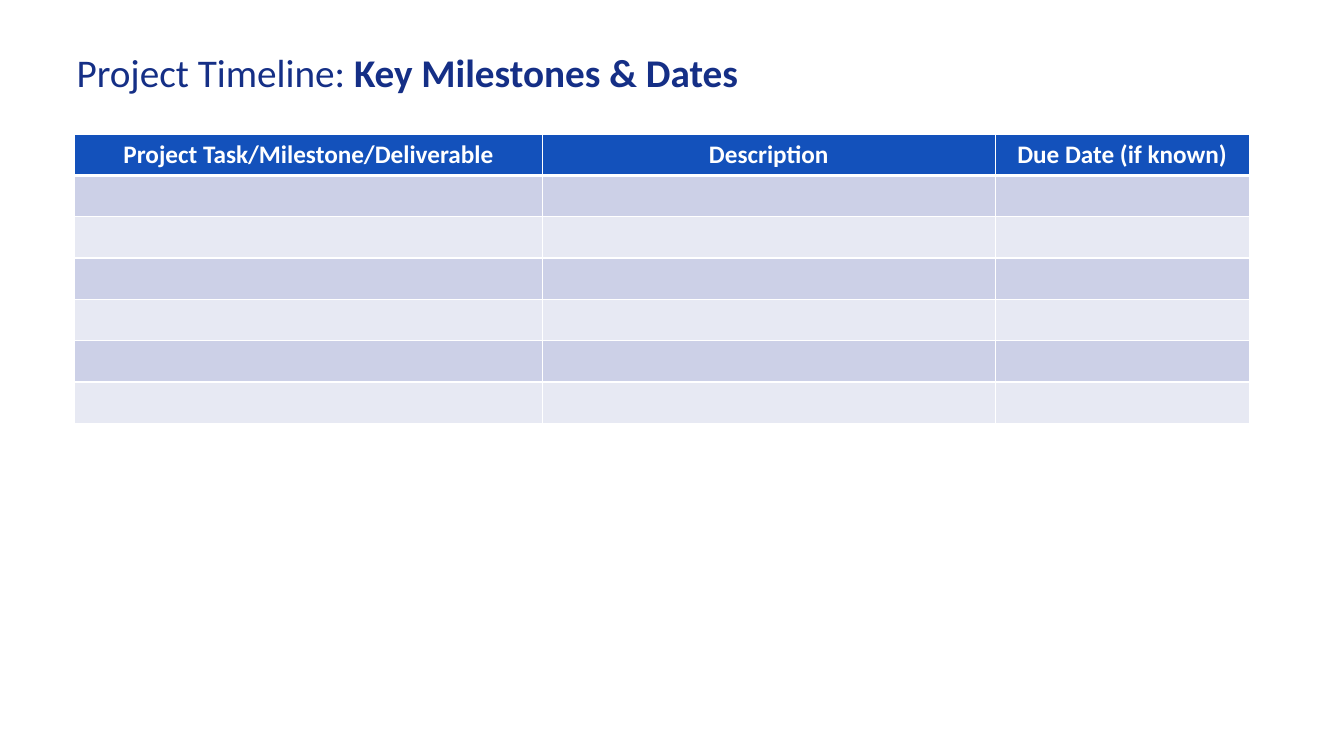
from dataclasses import dataclass

from lxml.etree import SubElement
from pptx import Presentation
from pptx.dml.color import RGBColor
from pptx.enum.text import MSO_ANCHOR, MSO_AUTO_SIZE, PP_ALIGN
from pptx.oxml.ns import qn
from pptx.util import Inches, Pt


@dataclass(frozen=True)
class Theme:
    font: str = "Calibri"
    title_size: int = 28
    table_size: int = 18
    title_color: str = "152F86"
    header_fill: str = "1351BB"
    header_text: str = "FFFFFF"
    bands: tuple = ("CCD0E7", "E7E9F3")
    border: str = "FFFFFF"
    thin: int = 1
    thick: int = 3


THEME = Theme()
SLIDE_WIDTH, SLIDE_HEIGHT = 13.33, 7.5
TITLE_BOX = (0.66, 0.43, 11.5, 0.63)
TITLE_RUNS = [("Project Timeline: ", False), ("Key Milestones & Dates", True)]
TABLE_LEFT, TABLE_TOP = 0.74, 1.33
ROW_HEIGHT = 0.41
EMPTY_ROWS = 6
COLUMNS = [
    ("Project Task/Milestone/Deliverable", 4.64),
    ("Description", 4.49),
    ("Due Date (if known)", 2.52),
]


def apply_format(target, values):
    for name, value in values.items():
        setattr(target, name, value)


def format_font(font, size, color, bold):
    apply_format(font, {"name": THEME.font, "size": Pt(size), "bold": bold})
    font.color.rgb = RGBColor.from_string(color)


def add_title(slide):
    title = slide.shapes.title
    left, top, width, height = map(Inches, TITLE_BOX)
    apply_format(title, {"left": left, "top": top, "width": width, "height": height})
    apply_format(title.text_frame, {
        "word_wrap": True,
        "auto_size": MSO_AUTO_SIZE.NONE,
        "vertical_anchor": MSO_ANCHOR.MIDDLE,
    })
    paragraph = title.text_frame.paragraphs[0]
    apply_format(paragraph, {"alignment": PP_ALIGN.LEFT, "line_spacing": 0.9})
    for text, bold in TITLE_RUNS:
        run = paragraph.add_run()
        run.text = text
        format_font(run.font, THEME.title_size, THEME.title_color, bold)


def set_borders(cell, top, bottom):
    """Draw the cell's four edges; call before filling, as edges come first in the XML."""
    properties = cell._tc.get_or_add_tcPr()
    edges = {"lnL": THEME.thin, "lnR": THEME.thin, "lnT": top, "lnB": bottom}
    for tag, width in edges.items():
        line = SubElement(properties, qn(f"a:{tag}"), w=str(Pt(width)))
        fill = SubElement(line, qn("a:solidFill"))
        SubElement(fill, qn("a:srgbClr"), val=THEME.border)


def format_cell(cell, row):
    set_borders(
        cell,
        top=THEME.thick if row == 1 else THEME.thin,
        bottom=THEME.thick if row == 0 else THEME.thin,
    )
    color = THEME.bands[(row - 1) % len(THEME.bands)] if row else THEME.header_fill
    cell.fill.solid()
    cell.fill.fore_color.rgb = RGBColor.from_string(color)


def write_header(cell, text):
    paragraph = cell.text_frame.paragraphs[0]
    paragraph.alignment = PP_ALIGN.CENTER
    run = paragraph.add_run()
    run.text = text
    format_font(run.font, THEME.table_size, THEME.header_text, True)


def add_milestone_table(slide):
    row_count = EMPTY_ROWS + 1
    table = slide.shapes.add_table(
        row_count, len(COLUMNS), Inches(TABLE_LEFT), Inches(TABLE_TOP),
        Inches(sum(width for _, width in COLUMNS)), Inches(ROW_HEIGHT * row_count),
    ).table
    for row in table.rows:
        row.height = Inches(ROW_HEIGHT)
    for index, (heading, width) in enumerate(COLUMNS):
        table.columns[index].width = Inches(width)
        for row in range(row_count):
            format_cell(table.cell(row, index), row)
        write_header(table.cell(0, index), heading)


def main():
    presentation = Presentation()
    apply_format(presentation, {
        "slide_width": Inches(SLIDE_WIDTH),
        "slide_height": Inches(SLIDE_HEIGHT),
    })
    title_only = presentation.slide_layouts.get_by_name("Title Only")
    slide = presentation.slides.add_slide(title_only)
    add_title(slide)
    add_milestone_table(slide)
    presentation.save("out.pptx")


if __name__ == "__main__":
    main()
